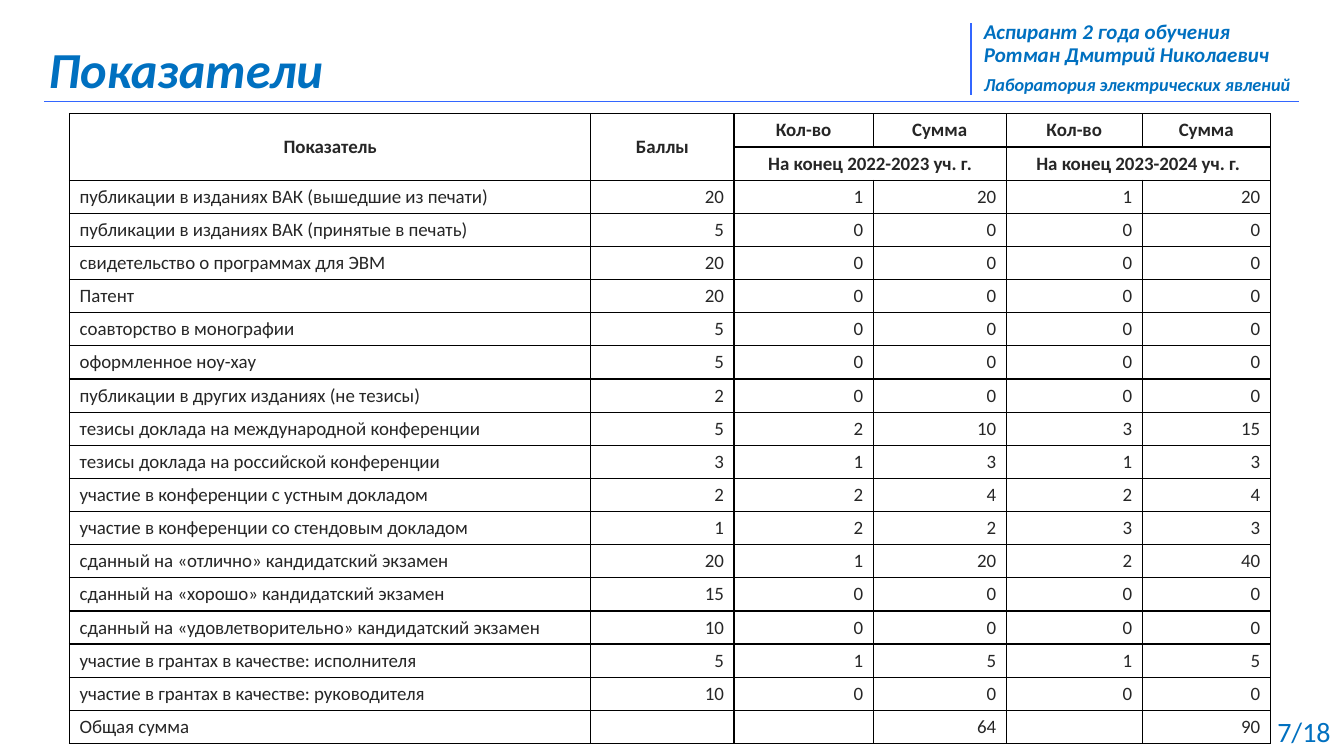
import pptx
import pptx.util
import pptx.dml.color
import pptx.enum.shapes
import pptx.enum.text
import pptx.oxml
import pptx.oxml.ns

Inches = pptx.util.Inches
Pt = pptx.util.Pt
RGBColor = pptx.dml.color.RGBColor
PP_ALIGN = pptx.enum.text.PP_ALIGN
MIDDLE = pptx.enum.text.MSO_ANCHOR.MIDDLE

BLUE = RGBColor(0x00, 0x70, 0xC0)
RULE_BLUE = RGBColor(0x33, 0x66, 0xFF)
DARK = RGBColor(0x26, 0x26, 0x26)
BLACK = RGBColor(0x00, 0x00, 0x00)
FONT = "Calibri"

COLUMN_WIDTHS = [5.17, 1.42, 1.38, 1.32, 1.35, 1.27]
HEADER = [
    ["Показатель", "Баллы", "Кол-во", "Сумма", "Кол-во", "Сумма"],
    ["", "", "На конец 2022-2023 уч. г.", "", "На конец 2023-2024 уч. г.", ""],
]
HEADER_MERGES = [((0, 0), (1, 0)), ((0, 1), (1, 1)), ((1, 2), (1, 3)), ((1, 4), (1, 5))]
INDICATORS = [
    ["публикации в изданиях ВАК (вышедшие из печати)", 20, 1, 20, 1, 20],
    ["публикации в изданиях ВАК (принятые в печать)", 5, 0, 0, 0, 0],
    ["свидетельство о программах для ЭВМ", 20, 0, 0, 0, 0],
    ["Патент", 20, 0, 0, 0, 0],
    ["соавторство в монографии", 5, 0, 0, 0, 0],
    ["оформленное ноу-хау", 5, 0, 0, 0, 0],
    ["публикации в других изданиях (не тезисы)", 2, 0, 0, 0, 0],
    ["тезисы доклада на международной конференции", 5, 2, 10, 3, 15],
    ["тезисы доклада на российской конференции", 3, 1, 3, 1, 3],
    ["участие в конференции с устным докладом", 2, 2, 4, 2, 4],
    ["участие в конференции со стендовым докладом", 1, 2, 2, 3, 3],
    ["сданный на «отлично» кандидатский экзамен", 20, 1, 20, 2, 40],
    ["сданный на «хорошо» кандидатский экзамен", 15, 0, 0, 0, 0],
    ["сданный на «удовлетворительно» кандидатский экзамен", 10, 0, 0, 0, 0],
    ["участие в грантах в качестве: исполнителя", 5, 1, 5, 1, 5],
    ["участие в грантах в качестве: руководителя", 10, 0, 0, 0, 0],
    ["Общая сумма", "", "", 64, "", 90],
]


def style_paragraph(paragraph, size, color, bold=False, italic=False, align=PP_ALIGN.LEFT):
    paragraph.alignment = align
    font = paragraph.font
    font.name = FONT
    font.size = Pt(size)
    font.bold = bold
    font.italic = italic
    font.color.rgb = color


def write_lines(frame, lines, bold=True):
    frame.word_wrap = True
    frame.auto_size = pptx.enum.text.MSO_AUTO_SIZE.NONE
    frame.vertical_anchor = MIDDLE
    for index, (text, size, gap) in enumerate(lines):
        paragraph = frame.paragraphs[0] if index == 0 else frame.add_paragraph()
        paragraph.text = text
        paragraph.line_spacing = 0.9
        paragraph.space_before = Pt(gap)
        style_paragraph(paragraph, size, BLUE, bold, bold)


def add_rule(slide, start, end, width):
    rule = slide.shapes.add_connector(
        pptx.enum.shapes.MSO_CONNECTOR.STRAIGHT, *map(Inches, start + end))
    rule.line.color.rgb = RULE_BLUE
    rule.line.width = Pt(width)
    pptx.oxml.ns.qn("a:effectLst")
    rule._element.spPr.append(pptx.oxml.parse_xml(
        f'<a:effectLst {pptx.oxml.ns.nsdecls("a")}/>'))


def add_heading(slide, left, top, width, height):
    heading = slide.shapes.title
    heading.left, heading.top = Inches(left), Inches(top)
    heading.width, heading.height = Inches(width), Inches(height)
    write_lines(heading.text_frame, [("Показатели", 36, 0)])
    add_rule(slide, (left + 0.06, top + 0.66), (left + 12.5, top + 0.66), 0.5)


def add_author(slide, left, top, width, height):
    author = slide.shapes.add_textbox(*map(Inches, (left, top, width, height)))
    write_lines(author.text_frame, [
        ("Аспирант 2 года обучения", 15, 0),
        ("Ротман Дмитрий Николаевич", 15, 0),
        ("Лаборатория электрических явлений", 13, 6.5),
    ])
    add_rule(slide, (left - 0.03, top + 0.9), (left - 0.03, top + 0.19), 1.5)


def add_page_number(slide, left, top, width, height):
    number = slide.shapes.add_textbox(*map(Inches, (left, top, width, height)))
    write_lines(number.text_frame, [("7/18", 20, 0)], bold=False)


def add_borders(cell):
    properties = cell._tc.get_or_add_tcPr()
    for side in ("lnL", "lnR", "lnT", "lnB"):
        properties.append(pptx.oxml.parse_xml(
            f'<a:{side} {pptx.oxml.ns.nsdecls("a")} w="{Pt(1)}">'
            f'<a:solidFill><a:srgbClr val="{BLACK}"/></a:solidFill></a:{side}>'))


def fill_cell(cell, text, align, bold):
    add_borders(cell)
    cell.fill.background()
    cell.vertical_anchor = MIDDLE
    cell.margin_left = cell.margin_right = Inches(0.1)
    cell.margin_top = cell.margin_bottom = Inches(0.05 if text else 0)
    cell.text = text
    style_paragraph(cell.text_frame.paragraphs[0], 13.5, DARK, bold, align=align)


def add_indicators(slide, left, top, width, height):
    rows = HEADER + INDICATORS
    table = slide.shapes.add_table(
        len(rows), len(COLUMN_WIDTHS), *map(Inches, (left, top, width, height))).table
    table.first_row = table.horz_banding = False
    for column, column_width in zip(table.columns, COLUMN_WIDTHS):
        column.width = Inches(column_width)
    for row_index, values in enumerate(rows):
        table.rows[row_index].height = Inches(height / len(rows))
        is_header = row_index < len(HEADER)
        for column_index, value in enumerate(values):
            if is_header:
                align = PP_ALIGN.CENTER
            else:
                align = PP_ALIGN.RIGHT if column_index else PP_ALIGN.JUSTIFY
            fill_cell(table.cell(row_index, column_index), str(value), align, is_header)
    for first, last in HEADER_MERGES:
        table.cell(*first).merge(table.cell(*last))


def main():
    presentation = pptx.Presentation()
    presentation.slide_width = Inches(13.33)
    presentation.slide_height = Inches(7.5)
    slide = presentation.slides.add_slide(presentation.slide_layouts[5])
    add_page_number(slide, 12.57, 6.94, 0.78, 0.68)
    add_heading(slide, 0.38, 0.35, 7.15, 0.73)
    add_author(slide, 9.66, 0.04, 3.27, 1.08)
    add_indicators(slide, 0.69, 1.13, 11.91, 6.21)
    presentation.save("out.pptx")


if __name__ == "__main__":
    main()
